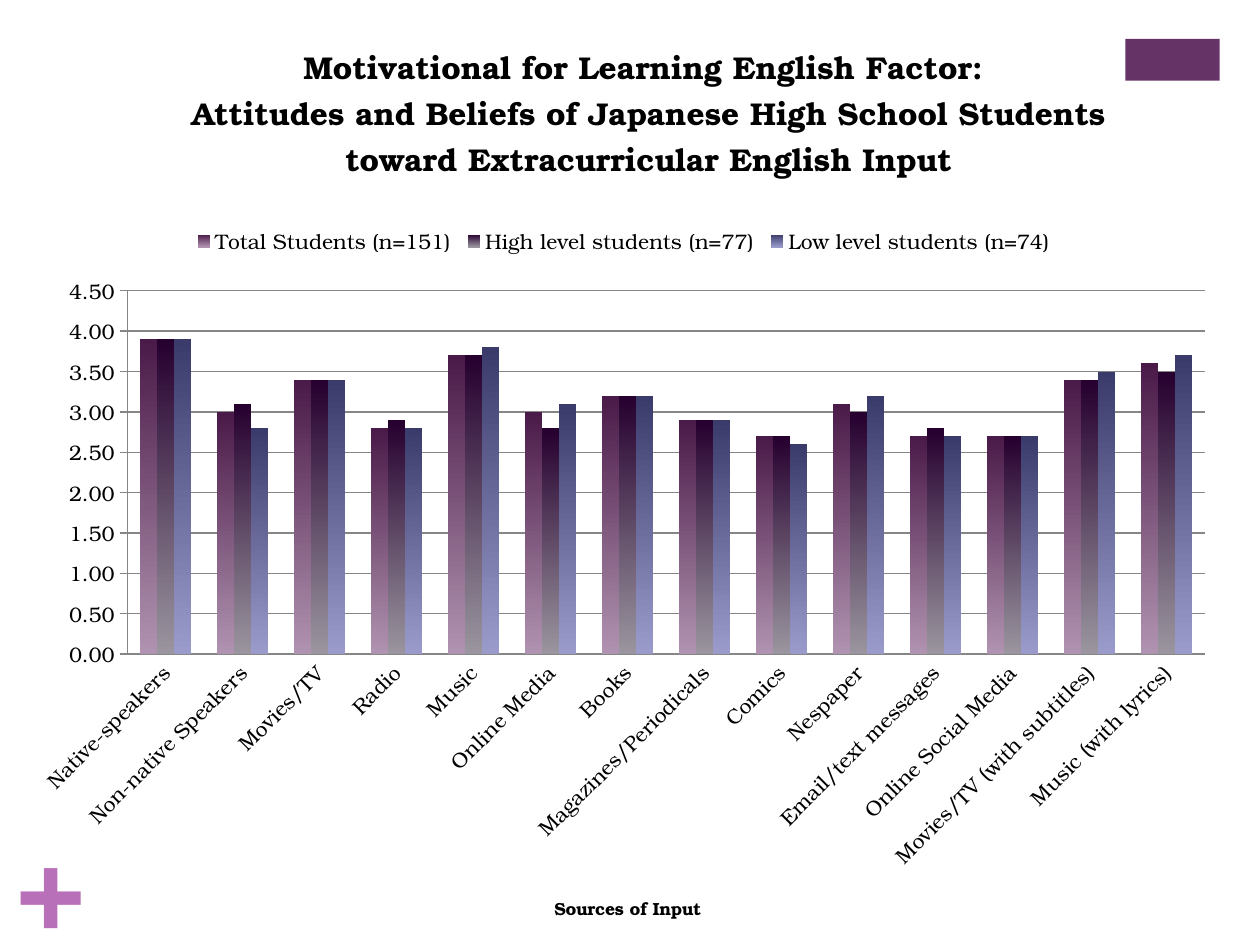
from lxml.etree import SubElement
from pptx import Presentation
from pptx.chart.data import CategoryChartData
from pptx.dml.color import RGBColor
from pptx.enum.chart import XL_CHART_TYPE as ChartType, XL_LEGEND_POSITION as LegendPos, XL_TICK_MARK as Tick
from pptx.enum.shapes import MSO_SHAPE as Shape
from pptx.oxml.ns import qn
from pptx.util import Pt

FONT = "TeX Gyre Bonum"
CATEGORIES = [
    "Native-speakers", "Non-native Speakers", "Movies/TV", "Radio", "Music",
    "Online Media", "Books", "Magazines/Periodicals", "Comics", "Nespaper",
    "Email/text messages", "Online Social Media", "Movies/TV (with subtitles)",
    "Music (with lyrics)",
]
SERIES = [
    ("Total Students (n=151)", ("4A1A48", "B093B0"),
     [3.9, 3, 3.4, 2.8, 3.7, 3, 3.2, 2.9, 2.7, 3.1, 2.7, 2.7, 3.4, 3.6]),
    ("High level students (n=77)", ("26002F", "9A959F"),
     [3.9, 3.1, 3.4, 2.9, 3.7, 2.8, 3.2, 2.9, 2.7, 3, 2.8, 2.7, 3.4, 3.5]),
    ("Low level students (n=74)", ("3B3B6B", "9A9ACB"),
     [3.9, 2.8, 3.4, 2.8, 3.8, 3.1, 3.2, 2.9, 2.6, 3.2, 2.7, 2.7, 3.5, 3.7]),
]
TITLE = [
    "Motivational for Learning English Factor: ",
    "Attitudes and Beliefs of Japanese High School Students toward Extracurricular English Input",
]


def rgb(value):
    """Turn a hex string into a colour."""
    return RGBColor.from_string(value)


def style_font(font, size, color="000000", bold=False):
    """Set the face, size, colour and weight of a font."""
    for name, value in dict(name=FONT, size=Pt(size), bold=bold).items():
        setattr(font, name, value)
    font.color.rgb = rgb(color)


def write_title(tf, lines, size):
    """Write bold paragraphs into a chart or axis title."""
    for i, line in enumerate(lines):
        p = tf.paragraphs[0] if i == 0 else tf.add_paragraph()
        r = p.add_run()
        r.text = line
        style_font(r.font, size, bold=True)


def place(element, **fractions):
    """Give a chart part a manual position in fractions of the chart."""
    layout = element.find(qn("c:layout"))
    if layout is None:
        layout = SubElement(element, qn("c:layout"))
        before = [c for tag in ("c:tx", "c:legendPos") for c in element.findall(qn(tag))]
        if before:
            before[-1].addnext(layout)
        else:
            element.insert(0, layout)
    manual = SubElement(layout, qn("c:manualLayout"))
    if element.tag == qn("c:plotArea"):
        SubElement(manual, qn("c:layoutTarget")).set("val", "inner")
    for key in ("x", "y"):
        SubElement(manual, qn(f"c:{key}Mode")).set("val", "edge")
    for key, value in fractions.items():
        SubElement(manual, qn(f"c:{key}")).set("val", str(value))


def add_decoration(s, block, plus):
    """Draw the corner block and the large plus sign."""
    sp = s.shapes.add_shape(Shape.RECTANGLE, *map(Pt, block))
    sp.shadow.inherit = False
    sp.fill.solid()
    sp.fill.fore_color.rgb = rgb("663366")
    sp.line.fill.background()
    tf = s.shapes.add_textbox(*map(Pt, plus)).text_frame
    for side in ("left", "top", "right", "bottom"):
        setattr(tf, f"margin_{side}", 0)
    tf.word_wrap = True
    r = tf.paragraphs[0].add_run()
    r.text = "+"
    style_font(r.font, 66, "B870B8", True)


def style_axes(chart):
    """Format the category and value axes."""
    cat, val = chart.category_axis, chart.value_axis
    for axis, tick in ((cat, Tick.NONE), (val, Tick.OUTSIDE)):
        axis.major_tick_mark, axis.minor_tick_mark = tick, Tick.NONE
        style_font(axis.tick_labels.font, 12)
        axis.format.line.color.rgb = rgb("868686")
    body = cat._element.find(qn("c:txPr")).find(qn("a:bodyPr"))
    body.set("rot", "-2700000")
    write_title(cat.axis_title.text_frame, ["Sources of Input"], 10)
    place(cat.axis_title._element, x=0.44, y=0.94)
    for name, value in dict(minimum_scale=0, maximum_scale=4.5, major_unit=0.5).items():
        setattr(val, name, value)
    val.tick_labels.number_format = "0.00"
    val.tick_labels.number_format_is_linked = False
    val.major_gridlines.format.line.color.rgb = rgb("868686")


def add_survey_chart(s, box):
    """Add the clustered column chart with its title and legend."""
    data = CategoryChartData(number_format="0.00")
    data.categories = CATEGORIES
    for name, _, values in SERIES:
        data.add_series(name, values)
    chart = s.shapes.add_chart(ChartType.COLUMN_CLUSTERED, *map(Pt, box), data).chart
    style_font(chart.font, 10)
    write_title(chart.chart_title.text_frame, TITLE, 18)
    chart.chart_title.include_in_layout = False
    place(chart.chart_title._element, x=0.14, y=0)
    chart.has_legend = True
    legend = chart.legend
    legend.position, legend.include_in_layout = LegendPos.TOP, False
    style_font(legend.font, 12)
    place(legend._element, x=0.14, y=0.2, w=0.72, h=0.05)
    plot = chart.plots[0]
    plot.gap_width, plot.overlap, plot.vary_by_categories = 150, 0, False
    for series, (_, colors, _) in zip(plot.series, SERIES):
        fill = series.format.fill
        fill.gradient()
        fill.gradient_angle = 270
        for stop, color in zip(fill.gradient_stops, colors):
            stop.color.rgb = rgb(color)
    style_axes(chart)
    place(chart._chartSpace.chart.plotArea, x=0.09, y=0.28, w=0.89, h=0.4)


def main():
    """Build the slide and save it."""
    prs = Presentation()
    prs.slide_width, prs.slide_height = Pt(720), Pt(540)
    s = prs.slides.add_slide(prs.slide_layouts[6])
    add_decoration(s, (643, 22.3, 54, 23.8), (9.4, 464, 46, 80))
    add_survey_chart(s, (10.4, 20.9, 692, 519))
    prs.save("out.pptx")


if __name__ == "__main__":
    main()
